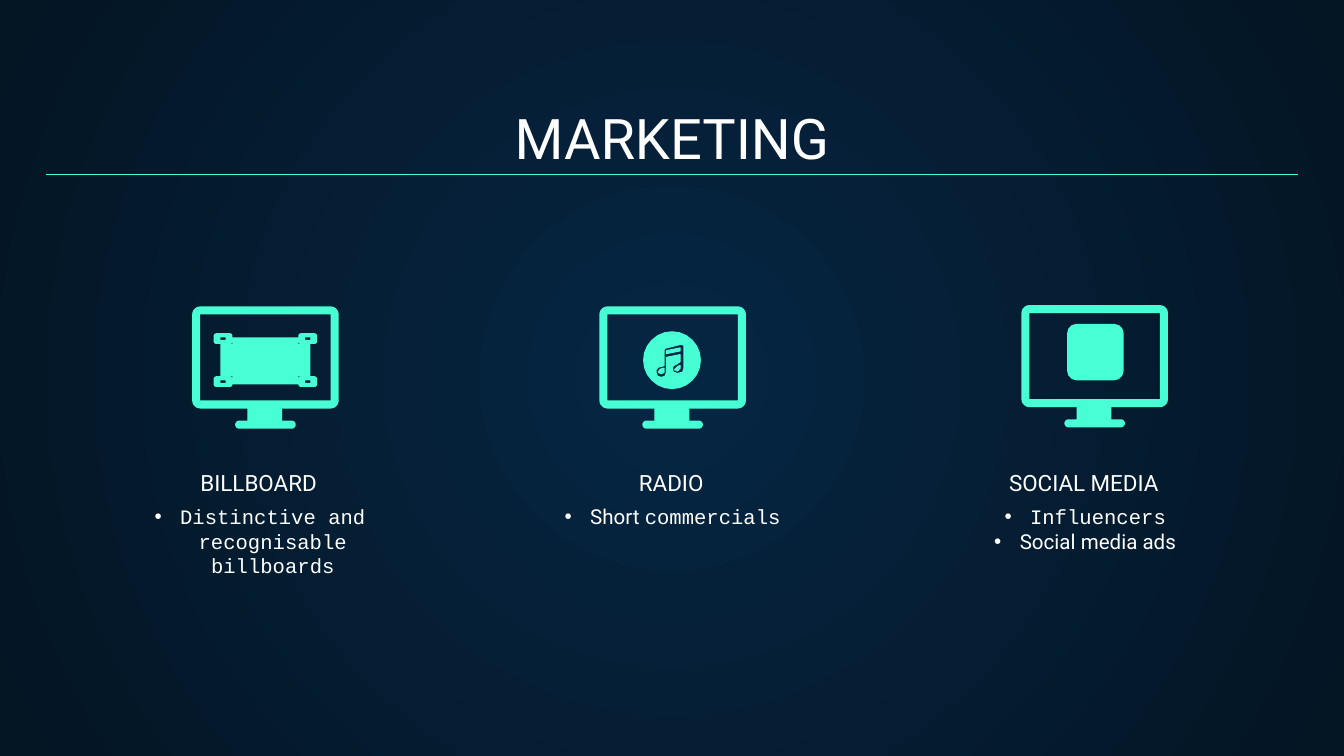
from math import cos, pi, sin
from lxml.etree import SubElement
from pptx import Presentation
from pptx.dml.color import RGBColor
from pptx.enum.shapes import MSO_CONNECTOR, MSO_SHAPE
from pptx.enum.text import MSO_ANCHOR, MSO_AUTO_SIZE, PP_ALIGN
from pptx.oxml.ns import qn
from pptx.util import Inches, Pt

COLORS = {"mint": "48FFD5", "text": "FFFFFF", "center": "052643", "edge": "041523"}
WIDTH = 10
HEIGHT = WIDTH * 9 / 16
MARGIN = 0.34
COLUMN_PITCH = 3.07
SANS, MONO = "Roboto", "Courier New"


def rounded(left, top, width, height, radius=0):
    if not radius:
        return [(left, top), (left + width, top), (left + width, top + height), (left, top + height)]
    corners = [(left + width - radius, top + height - radius), (left + radius, top + height - radius),
               (left + radius, top + radius), (left + width - radius, top + radius)]
    return [(x + radius * cos((quarter + step / 6) * pi / 2), y + radius * sin((quarter + step / 6) * pi / 2))
            for quarter, (x, y) in enumerate(corners) for step in range(7)]


def draw_icon(contours, line_width=0):
    scaled = [[(round(x * 1000), round(y * 1000)) for x, y in contour] for contour in contours]
    builder = slide.shapes.build_freeform(*scaled[0][0], scale=914.4)
    for number, contour in enumerate(scaled):
        if number:
            builder.move_to(*contour[0])
        builder.add_line_segments(contour[1:], close=True)
    icon = builder.convert_to_shape()
    icon.shadow.inherit = False
    icon.fill.solid()
    icon.fill.fore_color.rgb = mint
    if line_width:
        icon.line.color.rgb = mint
        icon.line.width = Pt(line_width)
    else:
        icon.line.fill.background()


mint = RGBColor.from_string(COLORS["mint"])
deck = Presentation()
deck.slide_width, deck.slide_height = Inches(WIDTH), Inches(HEIGHT)
slide = deck.slides.add_slide(deck.slide_layouts[4])

backdrop = slide.background.fill
backdrop.gradient()
for stop, shade in zip(backdrop.gradient_stops, ("center", "edge")):
    stop.color.rgb = RGBColor.from_string(COLORS[shade])
gradient = slide.element.find(".//" + qn("a:gradFill"))
gradient.remove(gradient.find(qn("a:lin")))
radial = SubElement(gradient, qn("a:path"), path="circle")
SubElement(radial, qn("a:fillToRect"), l="50000", t="50000", r="50000", b="50000")

channels = [
    ("BILLBOARD", [[("Distinctive and recognisable billboards", MONO)]], 2),
    ("RADIO", [[("Short ", SANS), ("commercials", MONO)]], 4),
    ("SOCIAL MEDIA", [[("Influencers", MONO)], [("Social media ads", SANS)]], 1),
]
holders = {holder.placeholder_format.idx: holder for holder in slide.placeholders}
unused = holders[3].element
unused.getparent().remove(unused)

texts = [(holders[0], (MARGIN, 0.71, WIDTH - 2 * MARGIN, 0.66), [[("MARKETING", SANS)]], 30, False)]
for column, (channel, points, holder_id) in enumerate(channels):
    offset = column * COLUMN_PITCH
    heading = slide.shapes.add_textbox(0, 0, 0, 0)
    texts.append((heading, (0.79 + offset, 3.58, 2.27, 0.21), [[(channel, SANS)]], 12, False))
    texts.append((holders[holder_id], (0.9 + offset, 3.65, 2.07, 0.55), points, 11, True))

for holder, box, paragraphs, size, bulleted in texts:
    for side, length in zip(("left", "top", "width", "height"), box):
        setattr(holder, side, Inches(length))
    frame = holder.text_frame
    frame_format = {"word_wrap": True, "auto_size": MSO_AUTO_SIZE.NONE,
                    "vertical_anchor": MSO_ANCHOR.TOP if bulleted else MSO_ANCHOR.BOTTOM}
    frame_format.update({f"margin_{side}": Inches(0.1) for side in ("left", "top", "right", "bottom")})
    for name, value in frame_format.items():
        setattr(frame, name, value)
    for number, pieces in enumerate(paragraphs):
        paragraph = frame.add_paragraph() if number else frame.paragraphs[0]
        for name, value in {"alignment": PP_ALIGN.CENTER, "space_before": Pt(0), "line_spacing": 1.0}.items():
            setattr(paragraph, name, value)
        if bulleted:
            properties = paragraph._p.get_or_add_pPr()
            properties.set("marL", str(Inches(0.19)))
            properties.set("indent", str(-Inches(0.19)))
            bullet_color = SubElement(properties, qn("a:buClr"))
            SubElement(bullet_color, qn("a:srgbClr"), val=COLORS["text"])
            SubElement(properties, qn("a:buFont"), typeface="Arial")
            SubElement(properties, qn("a:buChar"), char="•")
        for words, typeface in pieces:
            run = paragraph.add_run()
            run.text = words
            for name, value in {"name": typeface, "size": Pt(size), "bold": False}.items():
                setattr(run.font, name, value)
            run.font.color.rgb = RGBColor.from_string(COLORS["text"])

title_rule = slide.shapes.add_connector(
    MSO_CONNECTOR.STRAIGHT, Inches(MARGIN), Inches(1.3), Inches(WIDTH - MARGIN), Inches(1.3))
title_rule.line.color.rgb = mint
title_rule.line.width = Pt(0.75)
SubElement(title_rule.element.spPr, qn("a:effectLst"))

for left, top in ((1.43, 2.28), (4.46, 2.28), (7.6, 2.27)):
    draw_icon([
        rounded(left, top, 1.09, 0.76, 0.06),
        rounded(left + 0.06, top + 0.06, 0.97, 0.64),
        rounded(left + 0.41, top + 0.76, 0.26, 0.09),
        rounded(left + 0.32, top + 0.85, 0.45, 0.06, 0.03),
    ])

billboard = [rounded(1.64, 2.56, 0.67, 0.24), rounded(1.73, 2.51, 0.49, 0.05), rounded(1.73, 2.8, 0.49, 0.06)]
for left in (1.59, 2.22):
    for top in (2.48, 2.8):
        billboard += [rounded(left, top, 0.14, 0.08, 0.02), rounded(left + 0.05, top + 0.03, 0.04, 0.02)]
draw_icon(billboard)

note = [(5.07, 2.56), (5.09, 2.57), (5.09, 2.74), (5.08, 2.77), (5.04, 2.78), (5.01, 2.77), (5, 2.74),
        (5.01, 2.72), (5.03, 2.71), (5.06, 2.69), (5.06, 2.64), (4.96, 2.66), (4.96, 2.77), (4.95, 2.8),
        (4.92, 2.81), (4.89, 2.8), (4.88, 2.77), (4.88, 2.75), (4.9, 2.73), (4.94, 2.72), (4.94, 2.6), (4.95, 2.59)]
left_head = [(4.94, 2.74), (4.91, 2.75), (4.9, 2.77), (4.92, 2.78), (4.94, 2.77)]
right_head = [(5.06, 2.72), (5.04, 2.73), (5.02, 2.75), (5.04, 2.76), (5.06, 2.74)]
beam = [(5.06, 2.59), (4.96, 2.61), (4.96, 2.63), (5.06, 2.61)]
draw_icon([rounded(4.79, 2.47, 0.42, 0.42, 0.21), note, left_head, right_head, beam], 0.75)

social_tile = slide.shapes.add_shape(
    MSO_SHAPE.ROUNDED_RECTANGLE, Inches(7.94), Inches(2.41), Inches(0.42), Inches(0.42))
social_tile.shadow.inherit = False
social_tile.fill.solid()
social_tile.fill.fore_color.rgb = mint
social_tile.line.fill.background()

deck.save("out.pptx")
